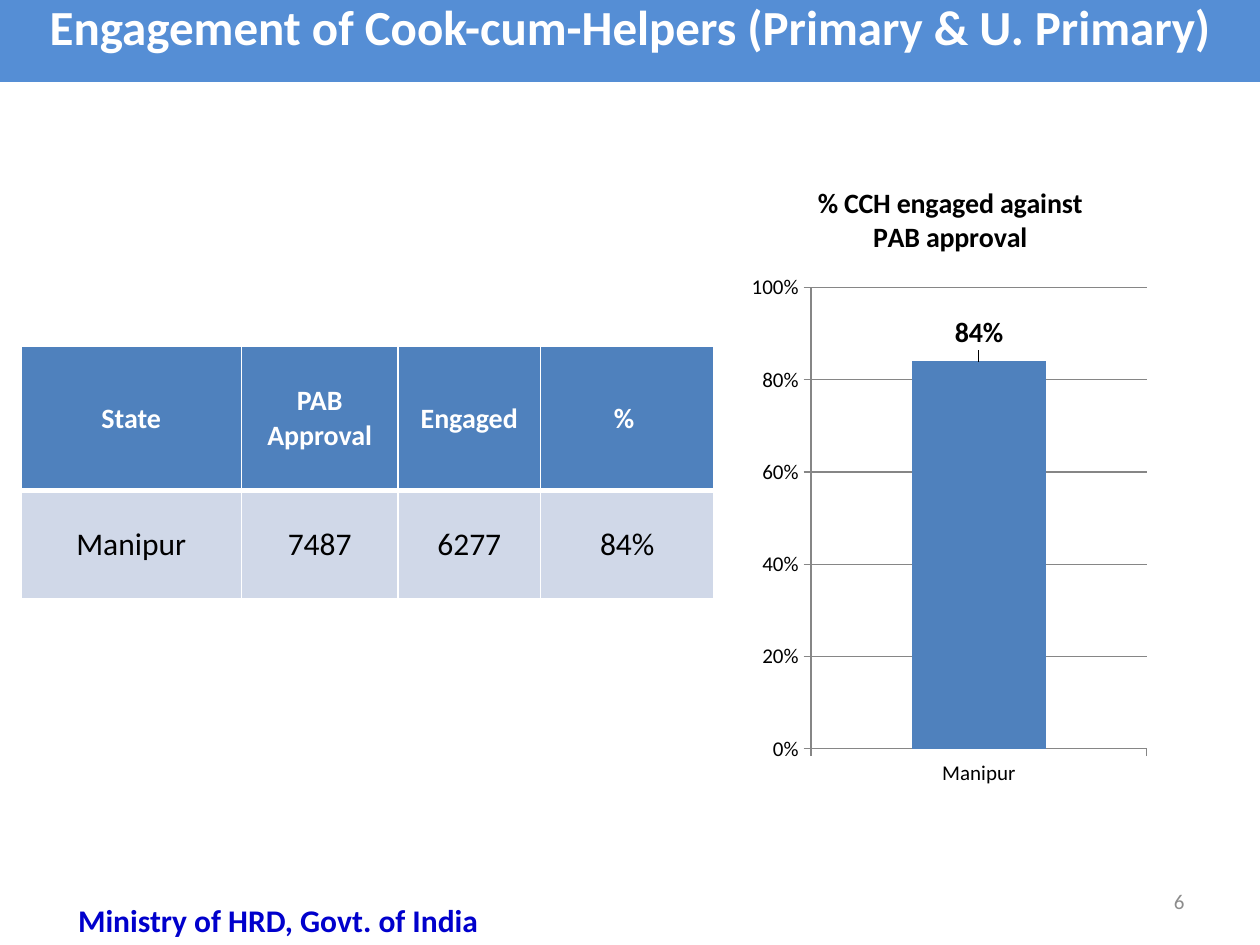
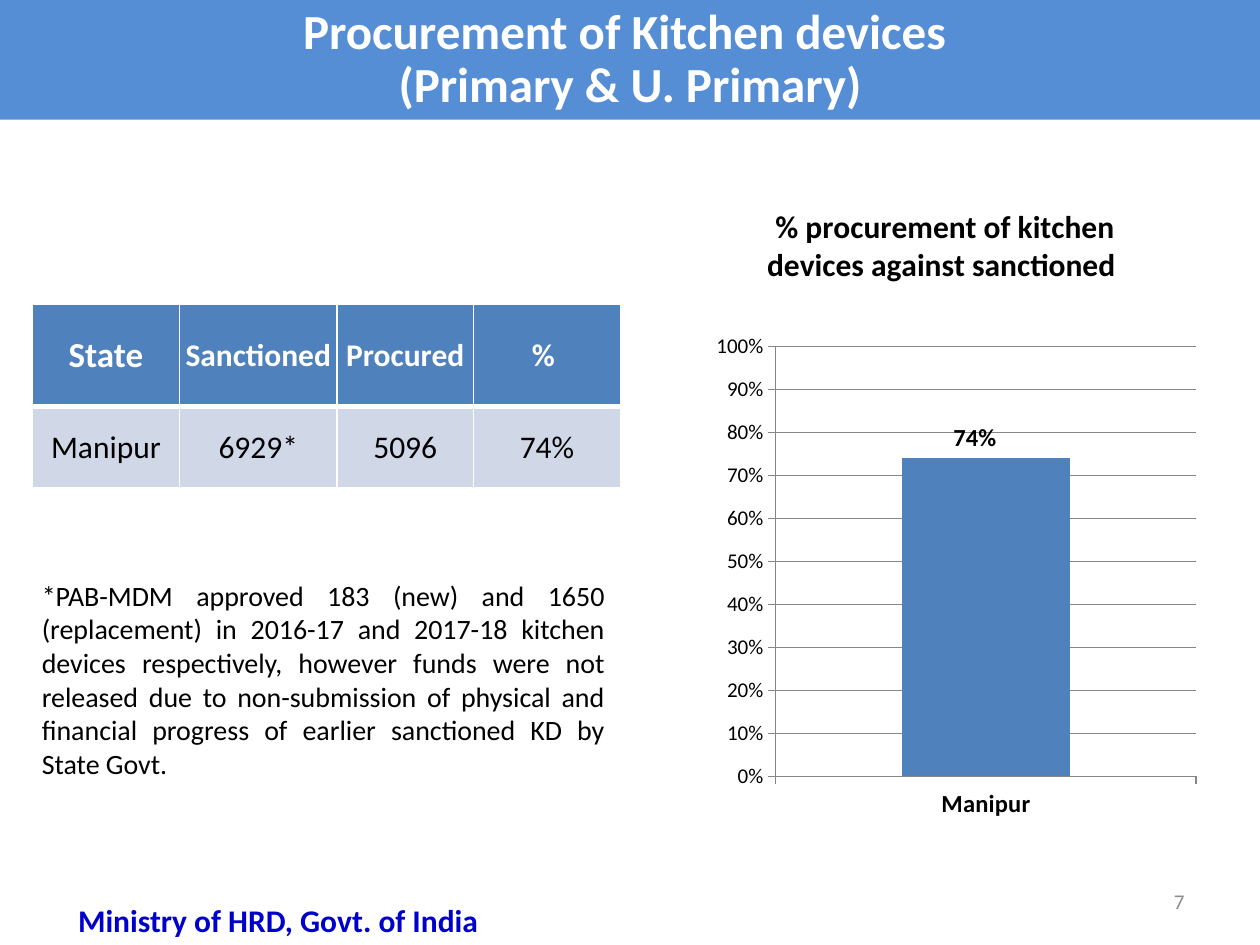
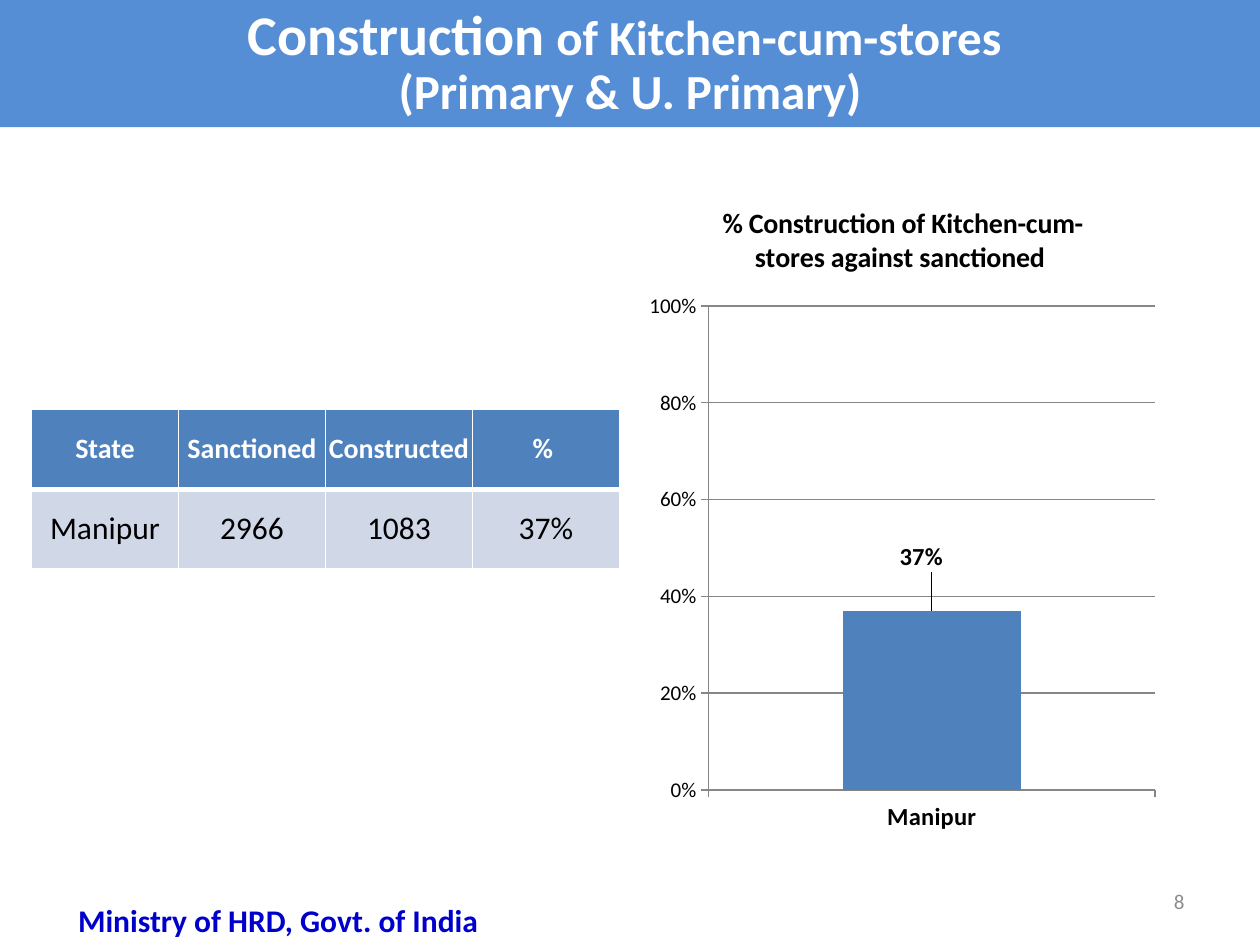
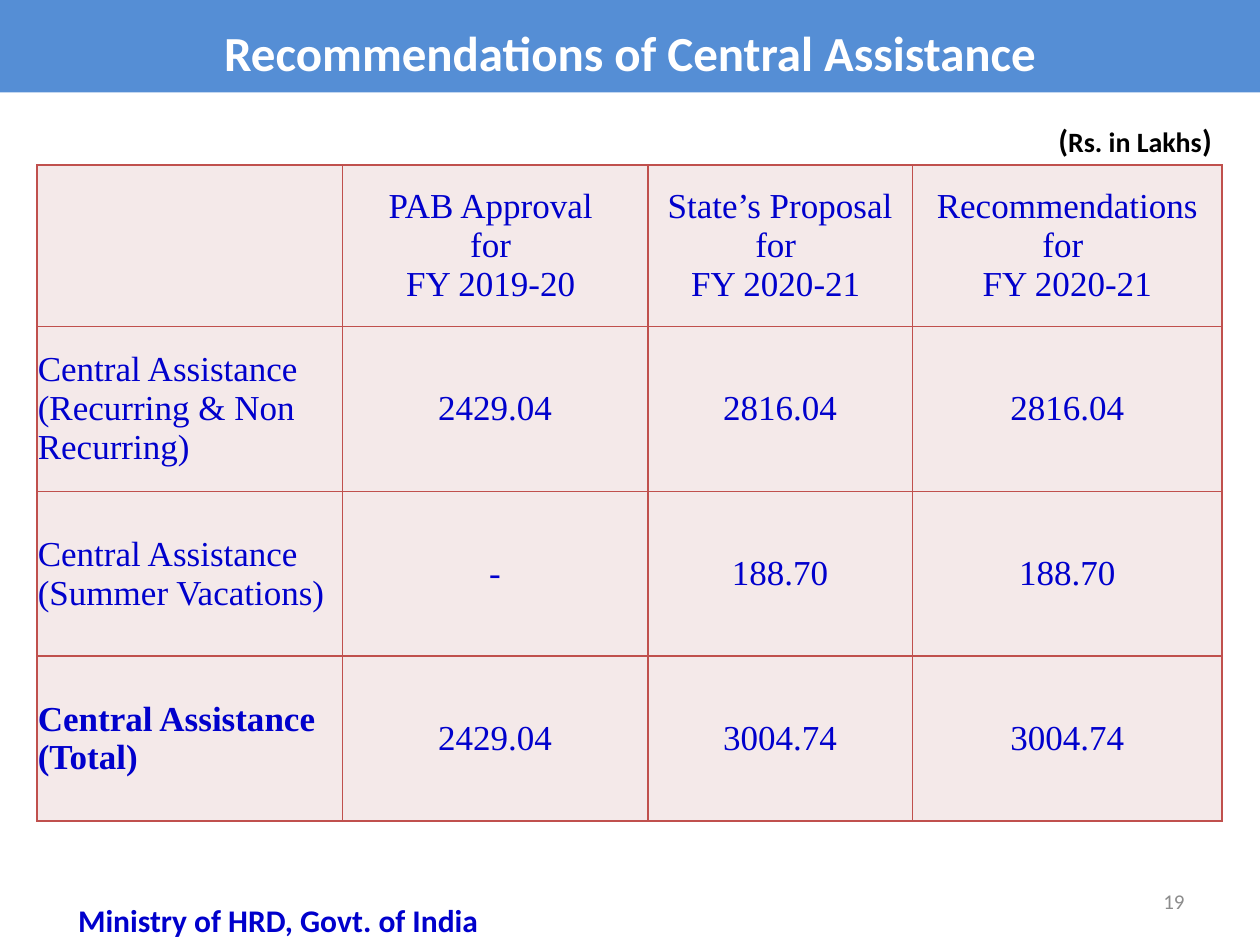
from dataclasses import dataclass
from typing import Optional, Union

from lxml import etree
from pptx import Presentation
from pptx.chart.data import CategoryChartData
from pptx.dml.color import RGBColor
from pptx.enum.chart import XL_CHART_TYPE, XL_LABEL_POSITION, XL_TICK_MARK
from pptx.enum.text import MSO_ANCHOR, MSO_AUTO_SIZE, PP_ALIGN
from pptx.oxml import parse_xml
from pptx.oxml.ns import nsdecls, qn
from pptx.util import Inches, Pt

LEFT, CENTER, RIGHT, JUSTIFY = PP_ALIGN.LEFT, PP_ALIGN.CENTER, PP_ALIGN.RIGHT, PP_ALIGN.JUSTIFY
TOP, MIDDLE = MSO_ANCHOR.TOP, MSO_ANCHOR.MIDDLE
GROW = MSO_AUTO_SIZE.SHAPE_TO_FIT_TEXT
COLUMNS = XL_CHART_TYPE.COLUMN_CLUSTERED
OUTSIDE_END = XL_LABEL_POSITION.OUTSIDE_END
TICK_OUT = XL_TICK_MARK.OUTSIDE

SLIDE_WIDTH, SLIDE_HEIGHT = Inches(10), Inches(7.5)
GRID_COLUMNS, GRID_ROWS = 120, 90
TITLE_ONLY_LAYOUT = 5


@dataclass(frozen=True)
class Theme:
    """Colours, fonts and type sizes of the whole deck."""
    band: str = "558ED5"
    accent: str = "4F81BD"
    pale_blue: str = "D0D8E8"
    pale_red: str = "F4E9E9"
    red_line: str = "C0504D"
    ministry_blue: str = "0000CC"
    page_grey: str = "8C8C8C"
    axis_grey: str = "868686"
    black: str = "000000"
    white: str = "FFFFFF"
    sans: str = "Calibri"
    serif: str = "Times New Roman"
    title_size: int = 28
    large_title_size: int = 32
    finance_size: int = 20
    body_size: int = 18
    note_size: int = 16
    category_size: int = 14
    small_size: int = 12


THEME = Theme()


@dataclass(frozen=True)
class Box:
    """A place given in grid columns and rows."""
    left: float
    top: float
    width: float
    height: float

    def emu(self) -> tuple[int, int, int, int]:
        """Return left, top, width and height in slide units."""
        return across(self.left), down(self.top), across(self.width), down(self.height)


@dataclass(frozen=True)
class Run:
    """A stretch of text with a size of its own."""
    text: str
    size: int


Line = Union[str, tuple[Run, ...]]


@dataclass(frozen=True)
class Heading:
    """The title band of a slide."""
    lines: tuple[Line, ...]
    top: float
    height: float
    spacing: float = 0.9


@dataclass(frozen=True)
class GridStyle:
    """The look of a table."""
    header_fill: str
    body_fill: str
    header_color: str
    body_color: str
    line_color: str
    font: str
    header_line: float
    header_bold: bool
    header_margin: float
    label_align: PP_ALIGN


@dataclass(frozen=True)
class Grid:
    """A table with its column widths and row heights in grid units."""
    left: float
    top: float
    widths: tuple[float, ...]
    heights: tuple[float, ...]
    rows: tuple[tuple[Line, ...], ...]
    style: GridStyle
    header_size: int
    body_size: int
    bold_label: Optional[str] = None


@dataclass(frozen=True)
class ShareChart:
    """A one-column percentage chart; plot and label shift are shares of it."""
    box: Box
    title: str
    share: float
    step: float
    plot: tuple[float, float, float, float]
    title_size: int
    label_size: int
    category_size: int
    category_bold: bool
    label_shift: tuple[float, float] = (0, 0)


@dataclass(frozen=True)
class StateSlide:
    """A slide that sets a state's figures beside its share."""
    heading: Heading
    page: int
    figures: Grid
    chart: ShareChart
    note: Optional[str] = None


STATE_STYLE = GridStyle(THEME.accent, THEME.pale_blue, THEME.white, THEME.black,
                        THEME.white, THEME.sans, 3, True, 0, CENTER)
FINANCE_STYLE = GridStyle(THEME.pale_red, THEME.pale_red, THEME.ministry_blue,
                          THEME.ministry_blue, THEME.red_line, THEME.serif, 1,
                          False, 0.84, LEFT)
CELL_MARGIN = 0.1
PAGE_BOX = Box(86, 83.4, 28, 4.8)
MINISTRY_BOX = Box(3, 85.2, 47, 4.8)
NOTE_BOX = Box(2.8, 54.5, 56, 20.6)
UNIT_BOX = Box(99.5, 10.9, 17.2, 4.8)
STATE = "Manipur"
LEVELS = "(Primary & U. Primary)"

STATE_SLIDES = (
    StateSlide(
        Heading(("Engagement of Cook-cum-Helpers (Primary & U. Primary)",), -0.4, 6.4), 6,
        Grid(2, 33, (21, 14.9, 13.6, 16.5), (13.7, 10.3),
             (("State", "PAB Approval", "Engaged", "% "),
              (STATE, "7487", "6277", "84%")), STATE_STYLE, THEME.note_size, THEME.body_size),
        ShareChart(Box(71, 15.2, 39, 61), "% CCH engaged against PAB approval", 0.84, 0.2,
                   (0.16, 0.2, 0.82, 0.72), THEME.note_size, THEME.note_size,
                   THEME.small_size, False, (0, -0.01))),
    StateSlide(
        Heading(("Procurement of Kitchen devices ", LEVELS), 0, 11.4), 7,
        Grid(3.1, 29, (14, 15, 13, 14), (9.7, 7.8),
             (((Run("State", THEME.finance_size),), "Sanctioned", "Procured", "% "),
              (STATE, "6929*", "5096", "74%")), STATE_STYLE, THEME.body_size, THEME.body_size),
        ShareChart(Box(64, 17, 52, 64), "% procurement of kitchen devices against sanctioned ",
                   0.74, 0.1, (0.19, 0.25, 0.77, 0.64), THEME.body_size,
                   THEME.category_size, THEME.category_size, True, (-0.02, 0)),
        "*PAB-MDM approved 183 (new) and 1650 (replacement) in 2016-17 and 2017-18 kitchen "
        "devices respectively, however funds were not released due to non-submission of "
        "physical and financial progress of earlier sanctioned KD by State Govt."),
    StateSlide(
        Heading(((Run("Construction", THEME.large_title_size),
                  Run(" of Kitchen-cum-stores ", THEME.title_size)), LEVELS), 0, 12.1), 8,
        Grid(3, 39, (14,) * 4, (7.6,) * 2,
             (("State", "Sanctioned", "Constructed", "% "),
              (STATE, "2966", "1083", "37%")), STATE_STYLE, THEME.note_size, THEME.body_size),
        ShareChart(Box(61, 17, 50, 64), "% Construction of Kitchen-cum-stores against sanctioned ",
                   0.37, 0.2, (0.13, 0.19, 0.85, 0.72), THEME.note_size,
                   THEME.category_size, THEME.category_size, True, (-0.02, -0.05))),
)

ASSISTANCE_HEADING = Heading(("Recommendations of Central Assistance",), -0.4, 8.4, 1.4)
ASSISTANCE_PAGE = 19
ASSISTANCE = Grid(
    3.5, 15.7, (29.1, 29.1, 25.2, 29.5), (15.4,) + (15.7,) * 3,
    (("", "PAB Approval \nfor \nFY 2019-20 ", "State’s Proposal for \nFY 2020-21 ",
      "Recommendations for \nFY 2020-21"),
     ("Central Assistance (Recurring & Non Recurring)", "2429.04", "2816.04", "2816.04"),
     ("Central Assistance (Summer Vacations)", "-", "188.70", "188.70"),
     ("Central Assistance (Total)", "2429.04", "3004.74", "3004.74")),
    FINANCE_STYLE, THEME.finance_size, THEME.finance_size, "Central Assistance (Total)")
UNIT_LINE = (Run("(", THEME.body_size), Run("Rs. in Lakhs", THEME.note_size),
             Run(")", THEME.body_size))


def across(columns: float) -> int:
    """Turn grid columns into slide units."""
    return round(SLIDE_WIDTH * columns / GRID_COLUMNS)


def down(rows: float) -> int:
    """Turn grid rows into slide units."""
    return round(SLIDE_HEIGHT * rows / GRID_ROWS)


def set_font(font, size: float, color: str = THEME.black, bold: bool = False,
             face: str = THEME.sans) -> None:
    """Format one font object."""
    font.name, font.size, font.bold = face, Pt(size), bold
    font.color.rgb = RGBColor.from_string(color)


def put_text(frame, lines: tuple[Line, ...], *, size: float, color: str = THEME.black,
             bold: bool = False, face: str = THEME.sans, align=CENTER, anchor=TOP,
             spacing: Optional[float] = None) -> None:
    """Write lines into a text frame, one paragraph each."""
    frame.vertical_anchor = anchor
    for index, line in enumerate(lines):
        paragraph = frame.add_paragraph() if index else frame.paragraphs[0]
        paragraph.alignment = align
        if spacing:
            paragraph.line_spacing = spacing
        for part in (Run(line, size),) if isinstance(line, str) else line:
            run = paragraph.add_run()
            run.text = part.text
            set_font(run.font, part.size, color, bold, face)


def add_label(slide, box: Box, line: Line, *, wrap: bool = True, grow: bool = True,
              **text_format) -> None:
    """Add a text box holding one paragraph."""
    frame = slide.shapes.add_textbox(*box.emu()).text_frame
    frame.word_wrap = wrap
    if grow:
        frame.auto_size = GROW
    put_text(frame, (line,), **text_format)


def add_framed_slide(deck, heading: Heading, page: int):
    """Add a slide with title band, page number and ministry line."""
    slide = deck.slides.add_slide(deck.slide_layouts[TITLE_ONLY_LAYOUT])
    band = slide.shapes.title
    band.left, band.top, band.width, band.height = Box(
        0, heading.top, GRID_COLUMNS, heading.height).emu()
    band.fill.solid()
    band.fill.fore_color.rgb = RGBColor.from_string(THEME.band)
    band.text_frame.auto_size = GROW
    put_text(band.text_frame, heading.lines, size=THEME.title_size, color=THEME.white,
             bold=True, anchor=MIDDLE, spacing=heading.spacing)
    add_label(slide, PAGE_BOX, str(page), grow=False, size=THEME.small_size,
              color=THEME.page_grey, align=RIGHT, anchor=MIDDLE)
    add_label(slide, MINISTRY_BOX, "Ministry of HRD, Govt. of India", size=THEME.body_size,
              color=THEME.ministry_blue, bold=True)
    return slide


def set_borders(cell, color: str, bottom: float) -> None:
    """Draw the four borders of a cell, the bottom one with its own width."""
    properties = cell._tc.get_or_add_tcPr()
    for index, (side, width) in enumerate(zip("LRTB", (1, 1, 1, bottom))):
        properties.insert(index, parse_xml(
            f'<a:ln{side} {nsdecls("a")} w="{Pt(width)}"><a:solidFill>'
            f'<a:srgbClr val="{color}"/></a:solidFill></a:ln{side}>'))


def add_grid(slide, grid: Grid) -> None:
    """Add a table."""
    style = grid.style
    box = Box(grid.left, grid.top, sum(grid.widths), sum(grid.heights))
    table = slide.shapes.add_table(len(grid.heights), len(grid.widths), *box.emu()).table
    table.first_row = table.horz_banding = False
    for column, width in zip(table.columns, grid.widths):
        column.width = across(width)
    for row_index, (row, height, entries) in enumerate(
            zip(table.rows, grid.heights, grid.rows)):
        row.height = down(height)
        header = row_index == 0
        for column_index, (cell, entry) in enumerate(zip(row.cells, entries)):
            side = style.header_margin if header else CELL_MARGIN
            cell.margin_left = cell.margin_right = across(side)
            cell.margin_top = cell.margin_bottom = 0
            cell.vertical_anchor = MIDDLE
            cell.fill.solid()
            cell.fill.fore_color.rgb = RGBColor.from_string(
                style.header_fill if header else style.body_fill)
            set_borders(cell, style.line_color, style.header_line if header else 1)
            if not entry:
                continue
            put_text(cell.text_frame,
                     tuple(entry.split("\n")) if isinstance(entry, str) else (entry,),
                     size=grid.header_size if header else grid.body_size,
                     color=style.header_color if header else style.body_color,
                     bold=style.header_bold if header else entry == grid.bold_label,
                     face=style.font, anchor=MIDDLE,
                     align=CENTER if header or column_index else style.label_align)


def manual_layout(**values: Union[str, float]) -> etree.ElementBase:
    """Build a chart layout element from its settings."""
    settings = "".join(f'<c:{key} val="{value}"/>' for key, value in values.items())
    return parse_xml(f'<c:layout {nsdecls("c")}><c:manualLayout>{settings}'
                     '</c:manualLayout></c:layout>')


def style_axis(axis, size: float, bold: bool = False) -> None:
    """Format the line, ticks and labels of an axis."""
    axis.major_tick_mark = TICK_OUT
    axis.format.line.color.rgb = RGBColor.from_string(THEME.axis_grey)
    axis.format.line.width = Pt(0.75)
    set_font(axis.tick_labels.font, size, bold=bold)


def add_share_chart(slide, spec: ShareChart) -> None:
    """Add a percentage column chart."""
    data = CategoryChartData(number_format="0%")
    data.categories = [STATE]
    data.add_series("Series 1", [spec.share])
    chart = slide.shapes.add_chart(COLUMNS, *spec.box.emu(), data).chart
    set_font(chart.font, THEME.body_size)
    chart.has_legend = False
    chart.has_title = True
    put_text(chart.chart_title.text_frame, (spec.title,), size=spec.title_size, bold=True)
    chart.chart_title.include_in_layout = False

    style_axis(chart.category_axis, spec.category_size, spec.category_bold)
    shares = chart.value_axis
    style_axis(shares, THEME.small_size)
    shares.minimum_scale, shares.maximum_scale, shares.major_unit = 0, 1, spec.step
    shares.tick_labels.number_format = "0%"
    shares.tick_labels.number_format_is_linked = False
    gridline = shares.major_gridlines.format.line
    gridline.color.rgb = RGBColor.from_string(THEME.axis_grey)
    gridline.width = Pt(0.75)

    plot = chart.plots[0]
    plot.gap_width, plot.vary_by_categories = 150, False
    bar = plot.series[0]
    bar.format.fill.solid()
    bar.format.fill.fore_color.rgb = RGBColor.from_string(THEME.accent)
    label = bar.points[0].data_label
    label.position = OUTSIDE_END
    set_font(label.font, spec.label_size, bold=True)
    shift_x, shift_y = spec.label_shift
    label_index = bar._element.find(".//" + qn("c:dLbl")).find(qn("c:idx"))
    label_index.addnext(manual_layout(x=shift_x, y=shift_y))

    left, top, width, height = spec.plot
    area = chart._chartSpace.chart.plotArea
    for layout in area.findall(qn("c:layout")):
        area.remove(layout)
    area.insert(0, manual_layout(layoutTarget="inner", xMode="edge", yMode="edge",
                                 x=left, y=top, w=width, h=height))


def add_state_slide(deck, content: StateSlide) -> None:
    """Add a slide with a state's table, chart and optional note."""
    slide = add_framed_slide(deck, content.heading, content.page)
    add_grid(slide, content.figures)
    add_share_chart(slide, content.chart)
    if content.note:
        add_label(slide, NOTE_BOX, content.note, size=THEME.note_size, align=JUSTIFY)


def add_assistance_slide(deck) -> None:
    """Add the slide on central assistance."""
    slide = add_framed_slide(deck, ASSISTANCE_HEADING, ASSISTANCE_PAGE)
    add_grid(slide, ASSISTANCE)
    add_label(slide, UNIT_BOX, UNIT_LINE, wrap=False, size=THEME.body_size, bold=True)


def main() -> None:
    """Build and save the deck."""
    deck = Presentation()
    deck.slide_width, deck.slide_height = SLIDE_WIDTH, SLIDE_HEIGHT
    for content in STATE_SLIDES:
        add_state_slide(deck, content)
    add_assistance_slide(deck)
    deck.save("out.pptx")


if __name__ == "__main__":
    main()
